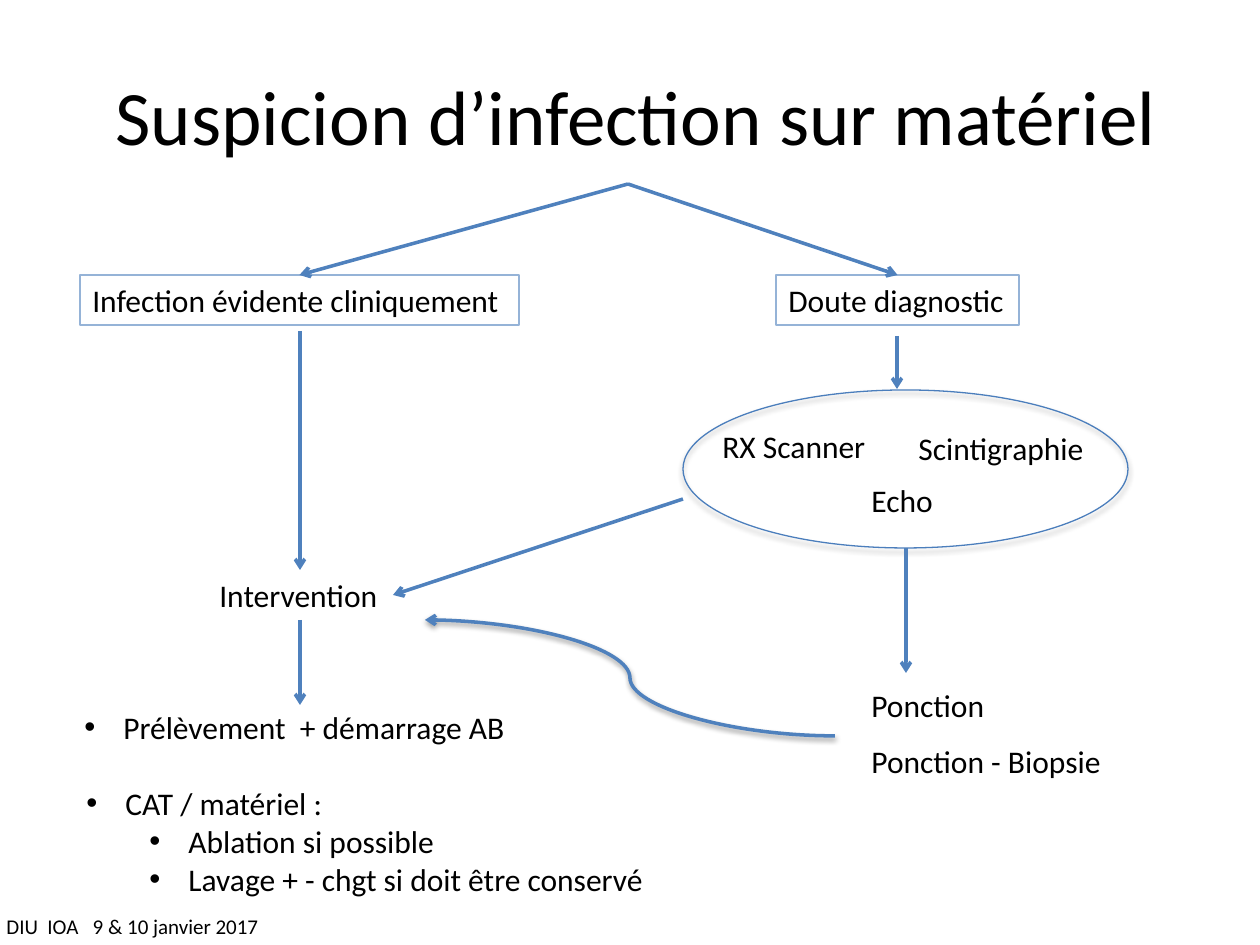
from dataclasses import dataclass
from typing import Any, Optional

import pptx
import pptx.dml.color
import pptx.enum.shapes
import pptx.enum.text
import pptx.oxml
import pptx.oxml.ns
import pptx.util

EMU_PER_PX = 914400 / 126
FONT = "Calibri"
COLOURS = {"text": "000000", "arrow": "4F81BD", "frame": "95B3D7", "oval": "4B7EBC"}
LINE_HEIGHT = 50
BULLET_INDENT = 39
LEVEL_INDENT = 63
TOP, RIGHT, BOTTOM = 0, 3, 2


@dataclass
class Label:
    text: str
    left: int
    top: int
    width: int
    height: int = LINE_HEIGHT
    size: int = 18
    framed: bool = False


@dataclass
class BulletList:
    left: int
    top: int
    width: int
    height: int
    items: list[tuple[int, str]]


@dataclass
class Arrow:
    start: tuple[int, int]
    end: tuple[int, int]
    start_joint: Optional[tuple[str, int]] = None
    end_joint: Optional[tuple[str, int]] = None


FOOTER = Label("DIU  IOA   9 & 10 janvier 2017", -6, 907, 281, 38, size=12)
TITLE = Label("Suspicion d’infection sur matériel", 103, 62, 1080, 106, size=44)
LABELS = [
    Label("Infection évidente cliniquement", 80, 275, 439, framed=True),
    Label("Doute diagnostic", 776, 275, 243, framed=True),
    Label("Intervention", 207, 570, 186),
    Label("Ponction", 859, 680, 140),
    Label("Ponction - Biopsie", 859, 736, 258),
]
EXAMS = [
    Label("RX Scanner", 710, 421, 170),
    Label("Echo", 859, 475, 88),
    Label("Scintigraphie", 906, 423, 193),
]
BULLETS = [
    BulletList(72, 702, 454, LINE_HEIGHT, [(0, "Prélèvement  + démarrage AB")]),
    BulletList(74, 778, 590, 127, [
        (0, "CAT / matériel :"),
        (1, "Ablation si possible"),
        (1, "Lavage + - chgt si doit être conservé"),
    ]),
]
FORK = (628, 184)
ARROWS = [
    Arrow(FORK, (897, 275), end_joint=("Doute diagnostic", TOP)),
    Arrow(FORK, (300, 275), end_joint=("Infection évidente cliniquement", TOP)),
    Arrow((300, 331), (300, 570), end_joint=("Intervention", TOP)),
    Arrow((300, 620), (300, 705), start_joint=("Intervention", BOTTOM)),
    Arrow((897, 336), (897, 389)),
    Arrow((906, 548), (906, 673)),
    Arrow((683, 499), (393, 595), end_joint=("Intervention", RIGHT)),
]


def px(length: int) -> int:
    return round(length * EMU_PER_PX)


def colour(name: str) -> Any:
    return pptx.dml.color.RGBColor.from_string(COLOURS[name])


def set_line(shape: Any, name: str, width: float) -> None:
    shape.line.color.rgb = colour(name)
    shape.line.width = pptx.util.Pt(width)


def set_effects(shape: Any, shadow: str = "") -> None:
    """Give the shape its own effect list, so that none comes from the theme."""
    properties = shape._element.spPr
    for old in properties.findall(pptx.oxml.ns.qn("a:effectLst")):
        properties.remove(old)
    namespace = pptx.oxml.ns.nsdecls("a")
    properties.append(pptx.oxml.parse_xml(f"<a:effectLst {namespace}>{shadow}</a:effectLst>"))


def soft_shadow(distance: float, opacity: int) -> str:
    return (
        f'<a:outerShdw blurRad="{pptx.util.Pt(3.1)}" dist="{pptx.util.Pt(distance)}" '
        f'dir="5400000" rotWithShape="0"><a:srgbClr val="{COLOURS["text"]}">'
        f'<a:alpha val="{opacity * 1000}"/></a:srgbClr></a:outerShdw>'
    )


def add_span(para: Any, text: str, size: int) -> None:
    para.alignment = pptx.enum.text.PP_ALIGN.LEFT
    span = para.add_run()
    span.text = text
    span.font.name = FONT
    span.font.size = pptx.util.Pt(size)
    span.font.color.rgb = colour("text")


def place(box: Any, area: Any) -> None:
    box.left, box.top = px(area.left), px(area.top)
    box.width, box.height = px(area.width), px(area.height)


def fill_label(box: Any, label: Label) -> None:
    place(box, label)
    frame = box.text_frame
    frame.word_wrap = False
    frame.auto_size = pptx.enum.text.MSO_AUTO_SIZE.NONE
    frame.vertical_anchor = pptx.enum.text.MSO_ANCHOR.TOP
    add_span(frame.paragraphs[0], label.text, label.size)
    if label.framed:
        set_line(box, "frame", 0.75)


def add_label(shapes: Any, label: Label) -> Any:
    box = shapes.add_textbox(0, 0, 0, 0)
    fill_label(box, label)
    return box


def add_bullets(shapes: Any, bullets: BulletList) -> None:
    box = shapes.add_textbox(0, 0, 0, 0)
    place(box, bullets)
    frame = box.text_frame
    frame.word_wrap = False
    for index, (level, text) in enumerate(bullets.items):
        para = frame.add_paragraph() if index else frame.paragraphs[0]
        para.level = level
        add_span(para, text, 18)
        properties = para._p.get_or_add_pPr()
        properties.set("marL", str(px(BULLET_INDENT + level * LEVEL_INDENT)))
        properties.set("indent", str(-px(BULLET_INDENT)))
        namespace = pptx.oxml.ns.nsdecls("a")
        properties.append(pptx.oxml.parse_xml(f'<a:buFont {namespace} typeface="Arial"/>'))
        properties.append(pptx.oxml.parse_xml(f'<a:buChar {namespace} char="•"/>'))


def add_arrow(shapes: Any, kind: Any, arrow: Arrow, boxes: dict[str, Any], shadow: str = "") -> None:
    connector = shapes.add_connector(kind, *map(px, arrow.start + arrow.end))
    if arrow.start_joint:
        name, side = arrow.start_joint
        connector.begin_connect(boxes[name], side)
    if arrow.end_joint:
        name, side = arrow.end_joint
        connector.end_connect(boxes[name], side)
    set_line(connector, "arrow", 2)
    head = pptx.oxml.parse_xml(f'<a:tailEnd {pptx.oxml.ns.nsdecls("a")} type="arrow"/>')
    connector.line._get_or_add_ln().append(head)
    set_effects(connector, shadow)


def add_exams(page: Any) -> None:
    """Group the imaging exams inside their oval."""
    group = page.shapes.add_group_shape()
    for exam in EXAMS:
        add_label(group.shapes, exam)
    oval = group.shapes.add_shape(
        pptx.enum.shapes.MSO_SHAPE.OVAL, px(683), px(390), px(445), px(158))
    oval.fill.background()
    set_line(oval, "oval", 0.75)
    set_effects(oval, soft_shadow(1.8, 35))


def main() -> None:
    deck = pptx.Presentation()
    deck.slide_width, deck.slide_height = px(1260), px(945)
    page = deck.slides.add_slide(deck.slide_layouts[5])
    fill_label(page.shapes.title, TITLE)
    add_label(page.shapes, FOOTER)
    boxes = {label.text: add_label(page.shapes, label) for label in LABELS}
    for bullets in BULLETS:
        add_bullets(page.shapes, bullets)
    add_exams(page)
    kinds = pptx.enum.shapes.MSO_CONNECTOR
    for arrow in ARROWS:
        add_arrow(page.shapes, kinds.STRAIGHT, arrow, boxes)
    back_to_surgery = Arrow((835, 736), (425, 620))
    add_arrow(page.shapes, kinds.CURVE, back_to_surgery, boxes, soft_shadow(1.6, 38))
    deck.save("out.pptx")


if __name__ == "__main__":
    main()
